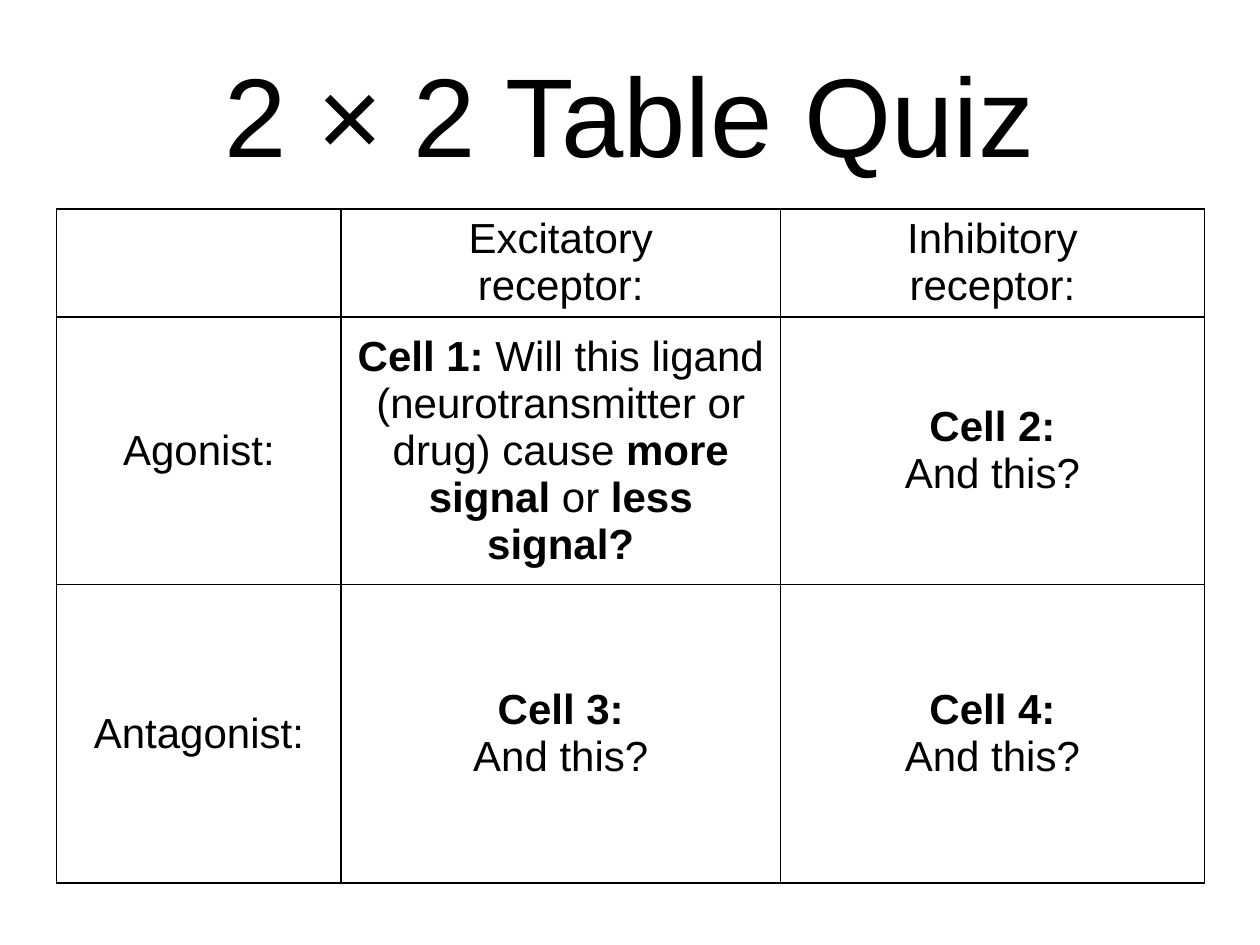
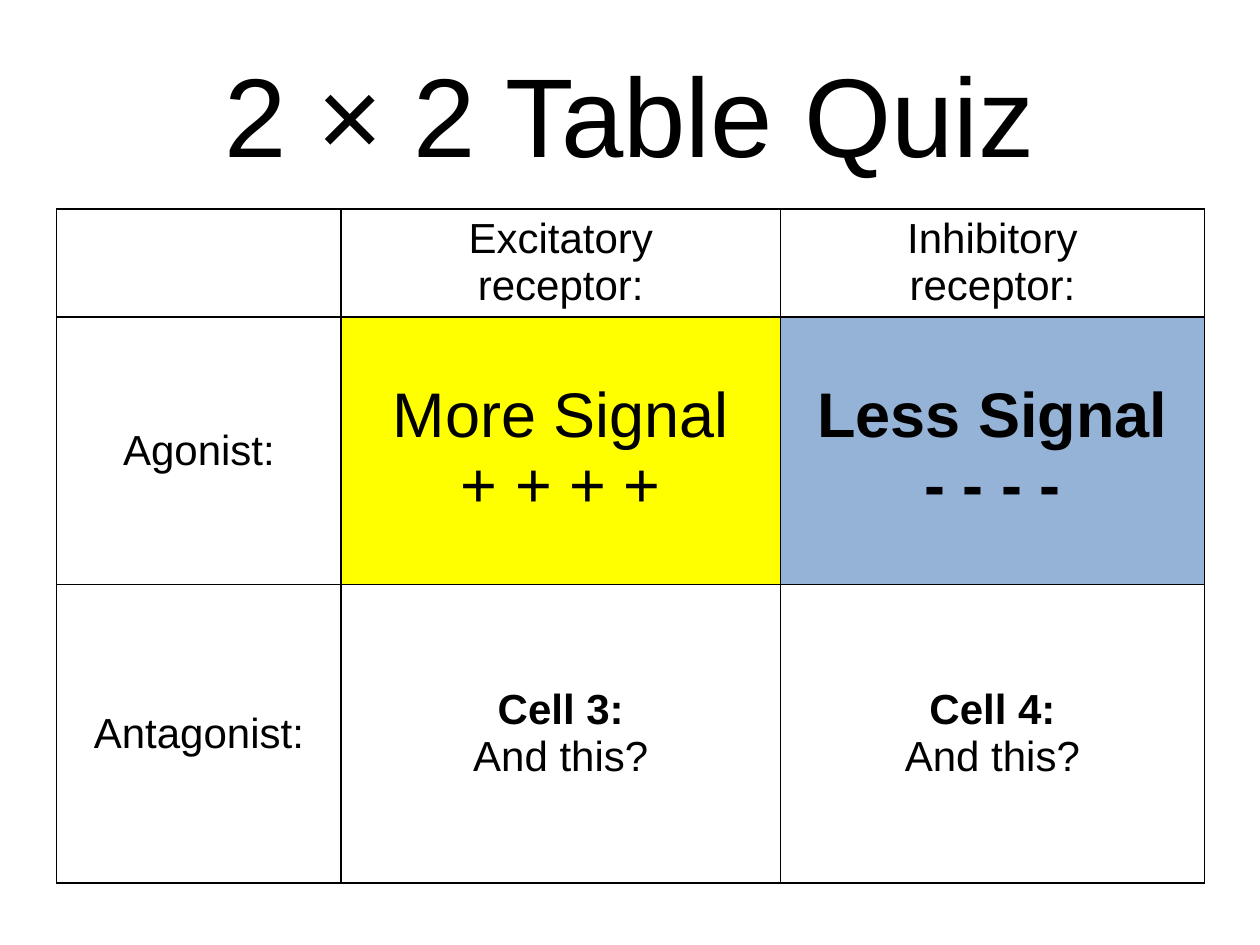
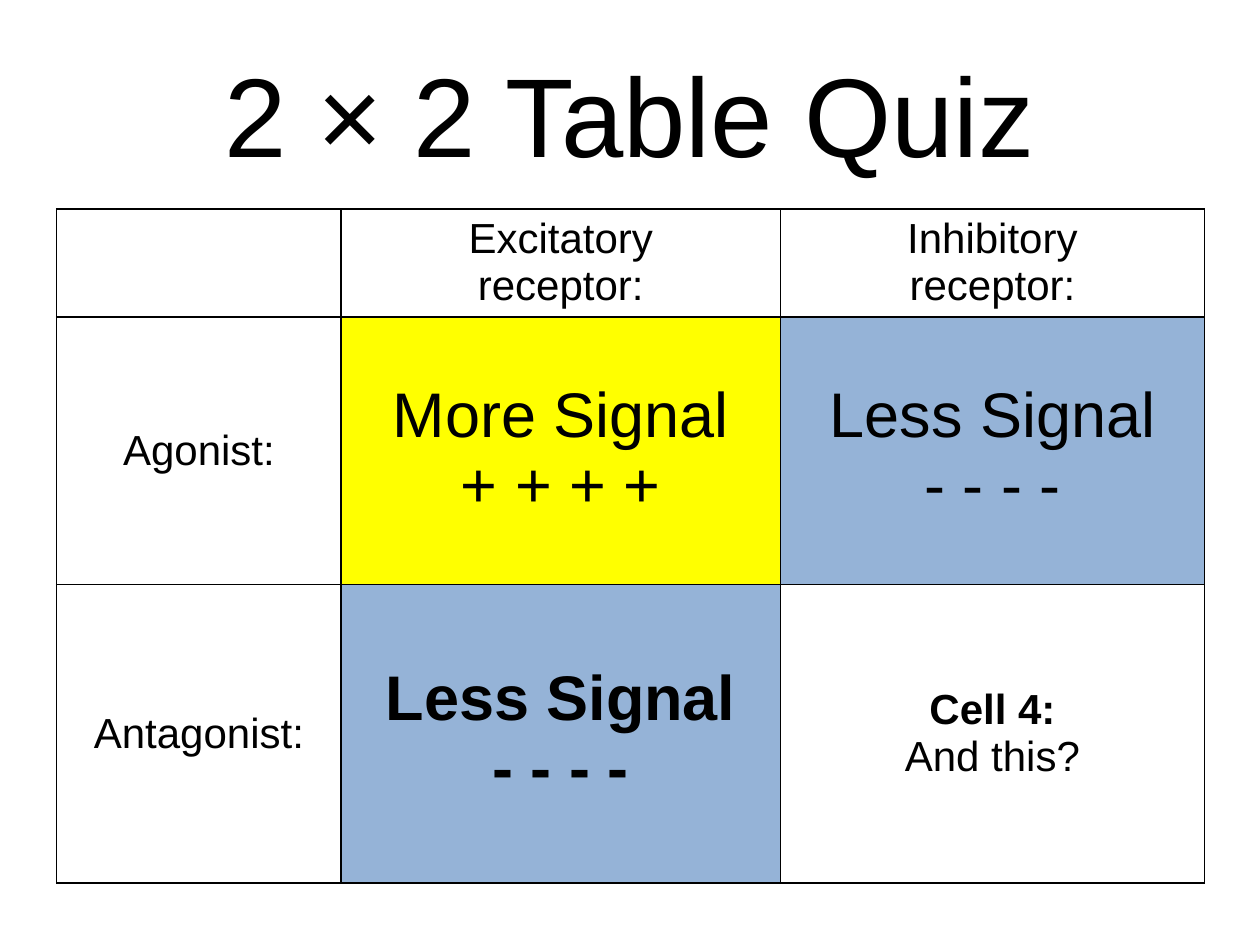
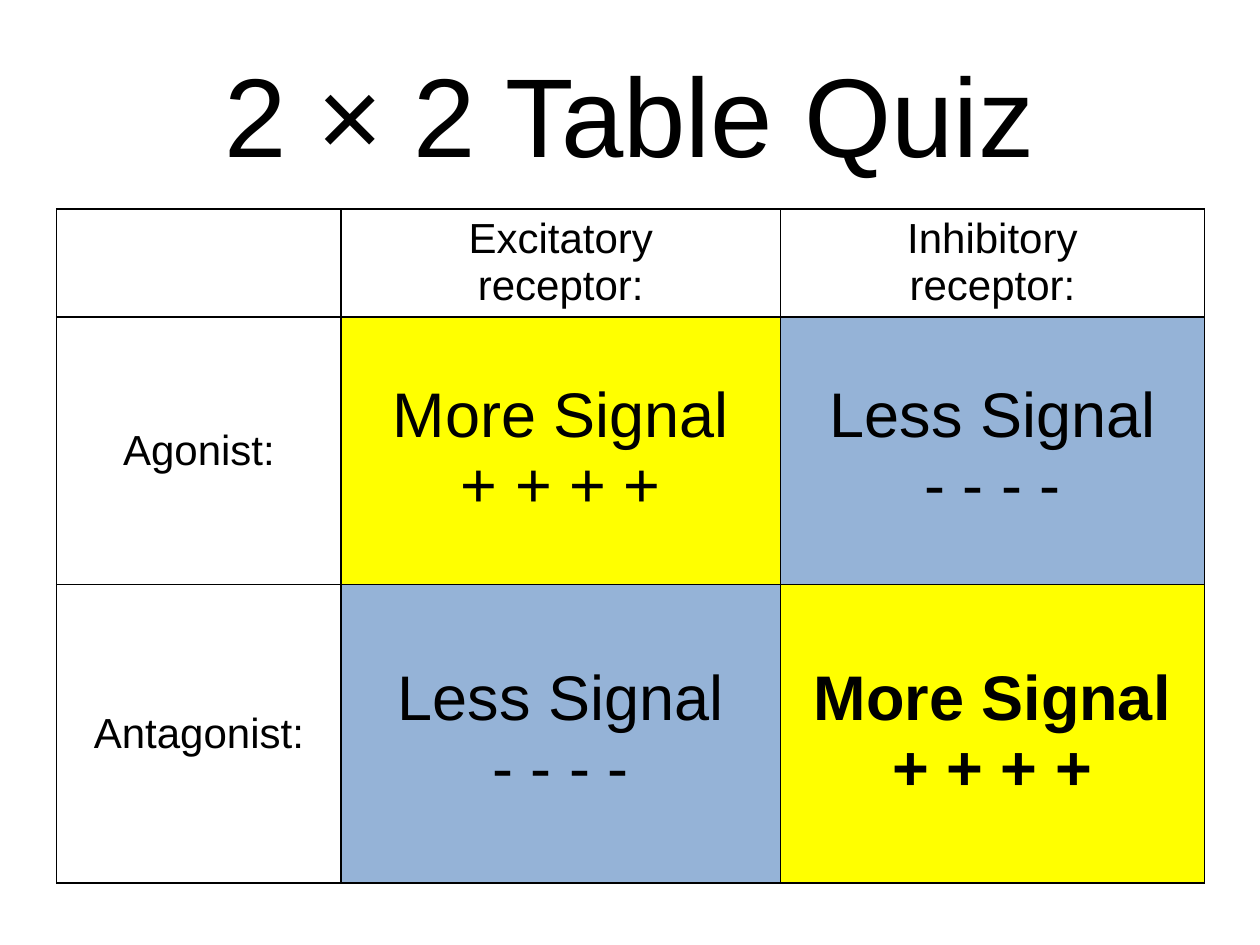
from lxml.etree import SubElement
from pptx import Presentation
from pptx.dml.color import RGBColor
from pptx.enum.text import MSO_ANCHOR as Anchor, PP_ALIGN as Align
from pptx.oxml.ns import qn
from pptx.util import Inches, Pt

COLORS = {"ink": "000000", "paper": "FFFFFF", "more": "FFFF00", "less": "95B3D7"}
FONT = "Arial"
TITLE_ONLY = 5
TITLE = "2 × 2 Table Quiz"
TITLE_BOX = (0.24, 0.27, 9.51, 1.25)
GRID_BOX = (0.45, 1.66, 9.11, 5.35)
COLUMN_SHARES = (2.26, 3.49, 3.37)
ROW_SHARES = (0.85, 2.1, 2.35)

# Each cell is a list of paragraphs, each paragraph a list of (text, bold) runs
HEADERS = [[[(kind, False)], [("receptor:", False)]]
           for kind in ("Excitatory", "Inhibitory")]
LIGANDS = [[[(ligand, False)]] for ligand in ("Agonist:", "Antagonist:")]
FIRST_QUESTION = [[
    ("Cell 1: ", True),
    ("Will this ligand (neurotransmitter or drug) cause ", False),
    ("more signal", True), (" or ", False), ("less signal?", True),
]]
QUESTIONS = [FIRST_QUESTION] + [
    [[(f"Cell {number}:", True)], [("And this?", False)]] for number in (2, 3, 4)]
ANSWERS = ("more", "less", "less", "more")
ANSWER_LINES = {"more": ("More Signal", "+ + + +"),
                "less": ("Less Signal", "- - - -")}
# Answers shown on each slide
REVEALED = (0, 2, 3, 4)


def rgb(name):
    return RGBColor.from_string(COLORS[name])


def write(frame, paragraphs, size):
    """Fill a text frame with centred paragraphs."""
    for index, runs in enumerate(paragraphs):
        paragraph = frame.paragraphs[0] if index == 0 else frame.add_paragraph()
        paragraph.alignment = Align.CENTER
        for text, bold in runs:
            run = paragraph.add_run()
            run.text = text
            looks = {"name": FONT, "size": Pt(size), "bold": bold}
            for key, value in looks.items():
                setattr(run.font, key, value)
            run.font.color.rgb = rgb("ink")


def add_title(slide, box):
    title = slide.shapes.title
    for key, value in zip(("left", "top", "width", "height"), box):
        setattr(title, key, Inches(value))
    title.text_frame.vertical_anchor = Anchor.MIDDLE
    write(title.text_frame, [[(TITLE, False)]], 64)


def add_borders(cell):
    properties = cell._tc.get_or_add_tcPr()
    for side in ("lnL", "lnR", "lnT", "lnB"):
        line = SubElement(properties, qn(f"a:{side}"), w=str(Pt(1)))
        fill = SubElement(line, qn("a:solidFill"))
        SubElement(fill, qn("a:srgbClr"), val=COLORS["ink"])


def fill_cell(cell, paragraphs, size=24, fill="paper", anchor=Anchor.MIDDLE):
    add_borders(cell)
    cell.fill.solid()
    cell.fill.fore_color.rgb = rgb(fill)
    cell.vertical_anchor = anchor
    write(cell.text_frame, paragraphs, size)


def add_quiz_grid(slide, box, revealed):
    """Questions in the grid, the first ones replaced by their answers."""
    left, top, width, height = box
    grid = slide.shapes.add_table(3, 3, *map(Inches, box)).table
    for flag in ("first_row", "horz_banding"):
        setattr(grid, flag, False)
    for column, share in zip(grid.columns, COLUMN_SHARES):
        column.width = Inches(width * share / sum(COLUMN_SHARES))
    for row, share in zip(grid.rows, ROW_SHARES):
        row.height = Inches(height * share / sum(ROW_SHARES))

    # Headings
    fill_cell(grid.cell(0, 0), [])
    for index, (header, ligand) in enumerate(zip(HEADERS, LIGANDS), 1):
        fill_cell(grid.cell(0, index), header, anchor=Anchor.TOP)
        fill_cell(grid.cell(index, 0), ligand)

    # Questions and answers; the newest answer is bold
    for index, (question, answer) in enumerate(zip(QUESTIONS, ANSWERS)):
        cell = grid.cell(1 + index // 2, 1 + index % 2)
        if index < revealed:
            newest = index == revealed - 1
            lines = [[(line, newest)] for line in ANSWER_LINES[answer]]
            fill_cell(cell, lines, size=36, fill=answer)
        else:
            fill_cell(cell, question)


def main():
    deck = Presentation()
    deck.slide_width, deck.slide_height = Inches(10), Inches(7.5)
    for revealed in REVEALED:
        slide = deck.slides.add_slide(deck.slide_layouts[TITLE_ONLY])
        add_title(slide, TITLE_BOX)
        add_quiz_grid(slide, GRID_BOX, revealed)
    deck.save("out.pptx")


if __name__ == "__main__":
    main()
